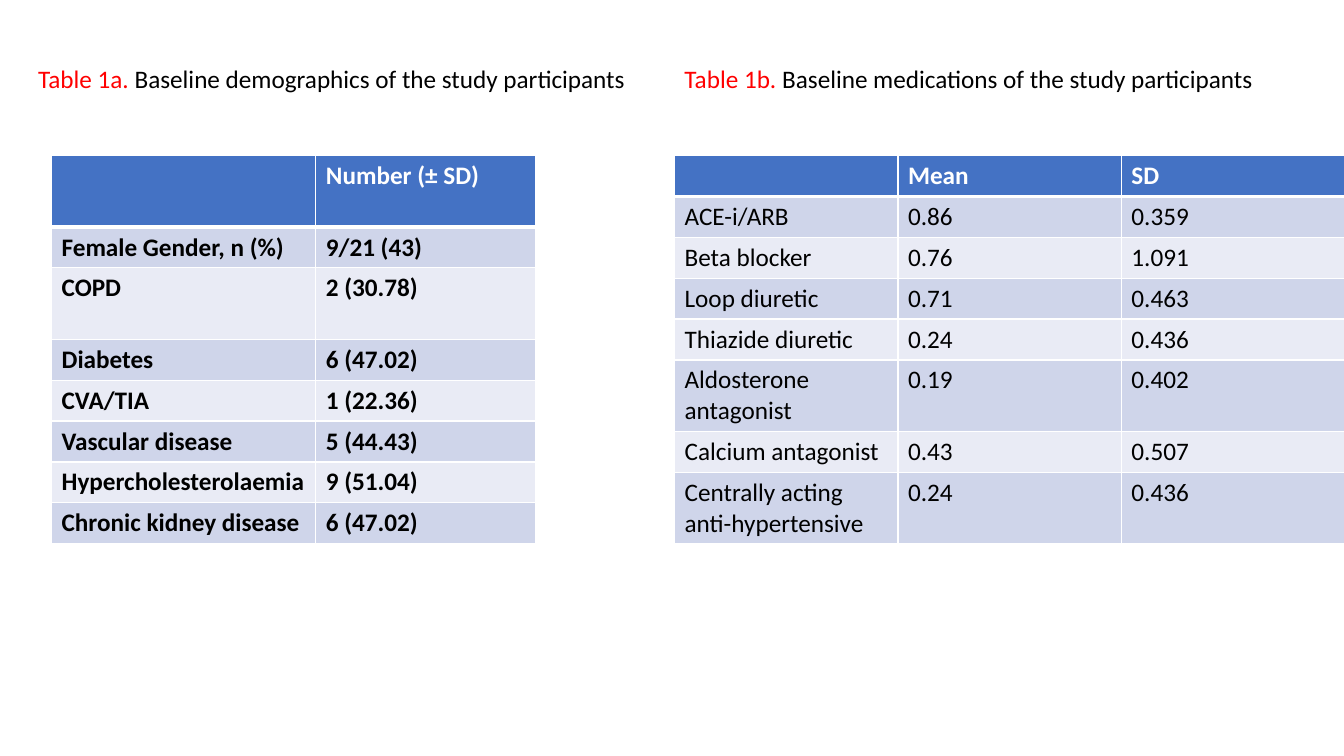
"""Build a slide with baseline demographics and medications tables."""
from lxml.etree import SubElement
from pptx import Presentation
from pptx.dml.color import RGBColor
from pptx.oxml.ns import qn
from pptx.util import Cm, Pt

COLOURS = {
    "header": "4472C4",
    "odd": "CFD5EA",
    "even": "E9EBF5",
    "border": "FFFFFF",
    "header_text": "FFFFFF",
    "text": "000000",
    "label": "FF0000",
}
ROW_HEIGHT, TALL_ROW_HEIGHT = 1.03, 1.8
TABLE_TOP, CAPTION_TOP = 3.92, 1.47

TABLES = [
    {
        "label": "Table 1a. ",
        "caption": "Baseline demographics of the study participants",
        "caption_left": 0.71,
        "left": 1.3,
        "columns": [6.66, 5.54],
        "tall_rows": [0, 2],
        "bold_body": True,
        "rows": [
            ["", "Number (± SD)"],
            ["Female Gender, n (%)", "9/21 (43)"],
            ["COPD", "2 (30.78)"],
            ["Diabetes", "6 (47.02)"],
            ["CVA/TIA", "1 (22.36)"],
            ["Vascular disease", "5 (44.43)"],
            ["Hypercholesterolaemia", "9 (51.04)"],
            ["Chronic kidney disease", "6 (47.02)"],
        ],
    },
    {
        "label": "Table 1b. ",
        "caption": "Baseline medications of the study participants",
        "caption_left": 17,
        "left": 17,
        "columns": [5.63, 5.63, 5.63],
        "tall_rows": [5, 7],
        "bold_body": False,
        "rows": [
            ["", "Mean", "SD"],
            ["ACE-i/ARB", "0.86", "0.359"],
            ["Beta blocker", "0.76", "1.091"],
            ["Loop diuretic", "0.71", "0.463"],
            ["Thiazide diuretic", "0.24", "0.436"],
            ["Aldosterone antagonist", "0.19", "0.402"],
            ["Calcium antagonist", "0.43", "0.507"],
            ["Centrally acting anti-hypertensive", "0.24", "0.436"],
        ],
    },
]


def style_font(font, colour, bold=False):
    font.name = "Calibri"
    font.size = Pt(18)
    font.bold = bold
    font.color.rgb = RGBColor.from_string(COLOURS[colour])


def add_borders(cell, row_index):
    properties = cell._tc.get_or_add_tcPr()
    widths = {
        "lnL": 1,
        "lnR": 1,
        "lnT": 3 if row_index == 1 else 1,
        "lnB": 3 if row_index == 0 else 1,
    }
    for side, width in widths.items():
        line = SubElement(properties, qn(f"a:{side}"), w=str(Pt(width)))
        fill = SubElement(line, qn("a:solidFill"))
        SubElement(fill, qn("a:srgbClr"), val=COLOURS["border"])


deck = Presentation()
deck.slide_width, deck.slide_height = Cm(33.87), Cm(19.05)
page = deck.slides.add_slide(deck.slide_layouts[6])

for content in TABLES:
    rows, columns = content["rows"], content["columns"]
    heights = [
        TALL_ROW_HEIGHT if index in content["tall_rows"] else ROW_HEIGHT
        for index in range(len(rows))
    ]
    table = page.shapes.add_table(
        len(rows), len(columns), Cm(content["left"]), Cm(TABLE_TOP),
        Cm(sum(columns)), Cm(sum(heights)),
    ).table
    for column, width in zip(table.columns, columns):
        column.width = Cm(width)

    for row_index, values in enumerate(rows):
        table.rows[row_index].height = Cm(heights[row_index])
        is_header = row_index == 0
        fill_name = "header" if is_header else "odd" if row_index % 2 else "even"
        for column_index, value in enumerate(values):
            cell = table.cell(row_index, column_index)
            add_borders(cell, row_index)
            cell.fill.solid()
            cell.fill.fore_color.rgb = RGBColor.from_string(COLOURS[fill_name])
            cell.text_frame.text = value
            for span in cell.text_frame.paragraphs[0].runs:
                style_font(
                    span.font,
                    "header_text" if is_header else "text",
                    is_header or content["bold_body"],
                )

    box = page.shapes.add_textbox(
        Cm(content["caption_left"]), Cm(CAPTION_TOP), Cm(16.59), Cm(1.03)
    )
    box.text_frame.word_wrap = True
    para = box.text_frame.paragraphs[0]
    for key, colour in (("label", "label"), ("caption", "text")):
        span = para.add_run()
        span.text = content[key]
        style_font(span.font, colour)

deck.save("out.pptx")
